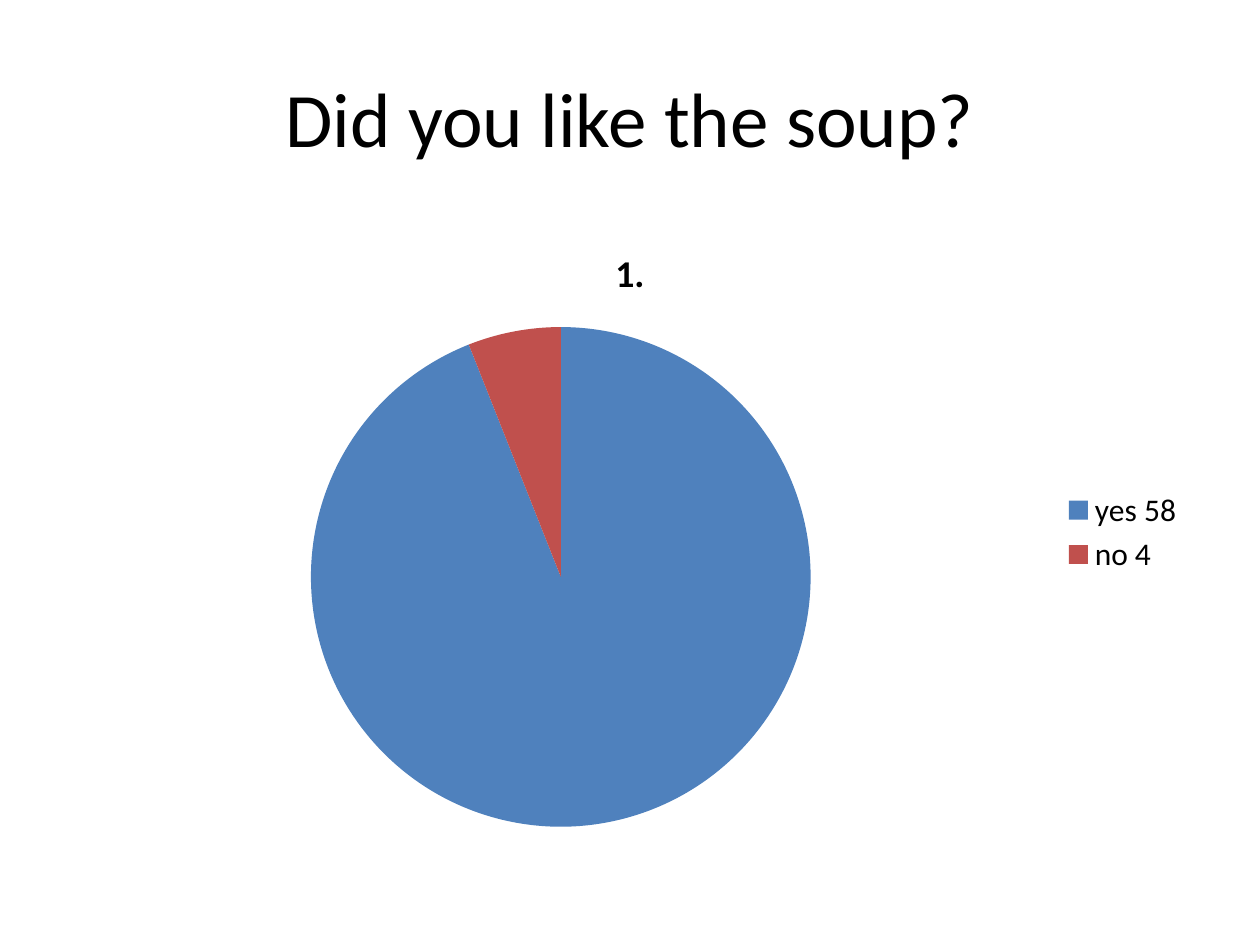
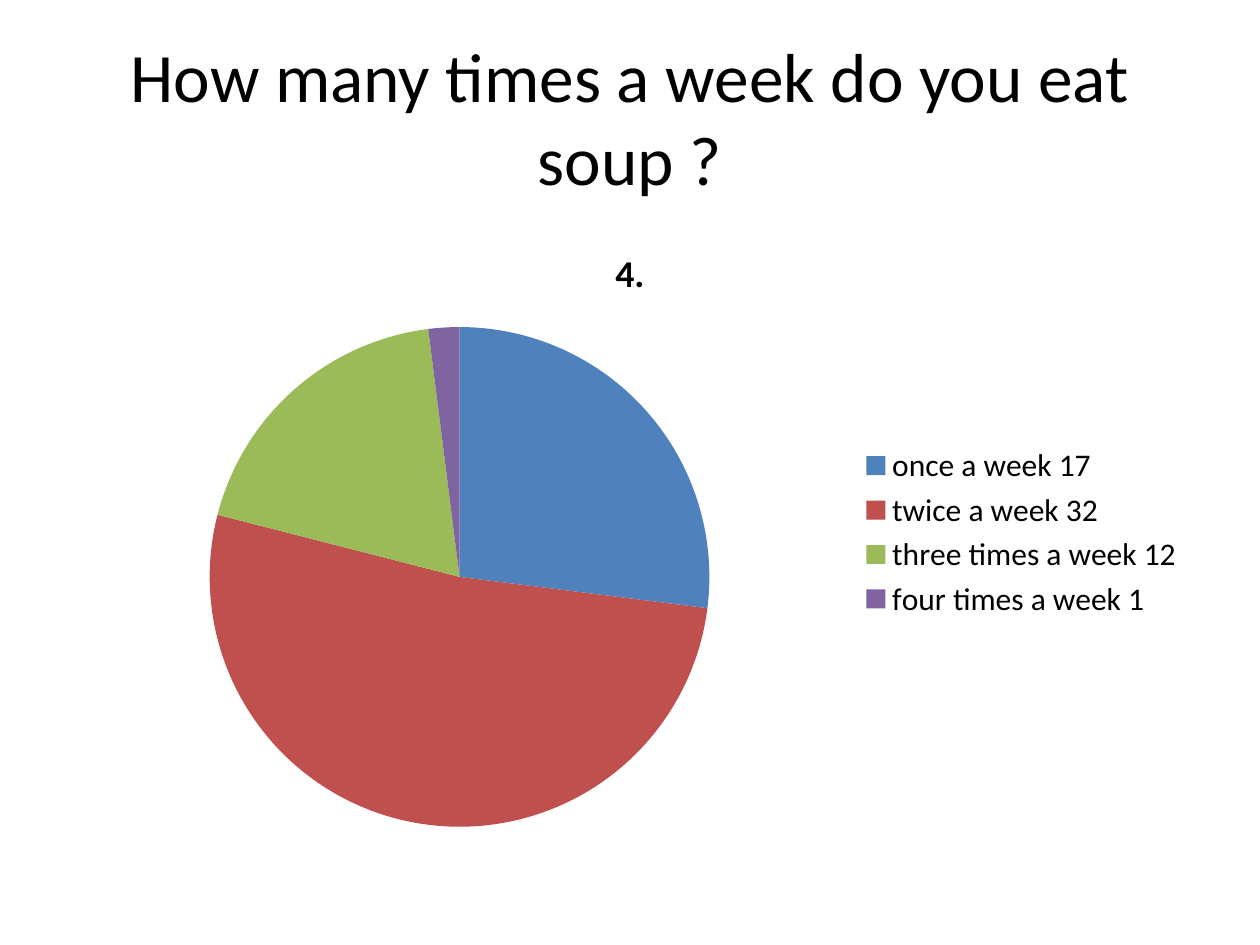
from dataclasses import dataclass

from pptx import Presentation
from pptx.chart.data import CategoryChartData
from pptx.dml.color import RGBColor
from pptx.enum.chart import XL_CHART_TYPE, XL_LEGEND_POSITION
from pptx.enum.text import MSO_ANCHOR, MSO_AUTO_SIZE, PP_ALIGN
from pptx.util import Pt

EMU_PER_PX = 9144  # 100 px to the inch
PAGE_SIZE = (1000, 750)
TITLE_AREA = (50, 30, 900, 125)
CHART_AREA = (50, 175, 900, 495)
TITLE_ONLY_LAYOUT = 5


@dataclass(frozen=True)
class Theme:
    font: str = "Calibri"
    ink: str = "000000"
    paper: str = "FFFFFF"
    slices: tuple = ("4F81BD", "C0504D", "9BBB59", "8064A2")
    title_size: float = 44
    long_title_size: float = 39.6
    chart_title_size: float = 21.6
    chart_size: float = 18


THEME = Theme()

QUESTIONS = [
    {
        "title": "Did you like the soup?",
        "title_size": THEME.title_size,
        "number": "1.",
        "answers": {"yes 58": 94, "no 4": 6},
    },
    {
        "title": "How many times a week do you eat soup ?",
        "title_size": THEME.long_title_size,
        "number": "4.",
        "answers": {
            "once a week 17": 27,
            "twice a week 32": 52,
            "three times a week 12": 19,
            "four times a week 1": 2,
        },
    },
]


def emu(*lengths):
    return [length * EMU_PER_PX for length in lengths]


def set_all(target, values):
    for name, value in values.items():
        setattr(target, name, value)


class SurveyDeck:
    def __init__(self, theme):
        self.theme = theme
        self.deck = Presentation()
        self.page = None
        width, height = emu(*PAGE_SIZE)
        set_all(self.deck, {"slide_width": width, "slide_height": height})

    def add_page(self):
        layout = self.deck.slide_layouts[TITLE_ONLY_LAYOUT]
        self.page = self.deck.slides.add_slide(layout)
        fill = self.page.background.fill
        fill.solid()
        fill.fore_color.rgb = RGBColor.from_string(self.theme.paper)

    def style_font(self, font, size, bold=False):
        set_all(font, {"name": self.theme.font, "size": Pt(size), "bold": bold})
        font.color.rgb = RGBColor.from_string(self.theme.ink)

    def add_title(self, text, size):
        title = self.page.shapes.title
        set_all(title, dict(zip(("left", "top", "width", "height"), emu(*TITLE_AREA))))
        frame = title.text_frame
        set_all(frame, {
            "text": text,
            "word_wrap": True,
            "auto_size": MSO_AUTO_SIZE.NONE,
            "vertical_anchor": MSO_ANCHOR.MIDDLE,
        })
        para = frame.paragraphs[0]
        para.alignment = PP_ALIGN.CENTER
        self.style_font(para.runs[0].font, size)

    def add_pie(self, name, answers):
        data = CategoryChartData()
        data.categories = list(answers)
        data.add_series(name, list(answers.values()))
        chart = self.page.shapes.add_chart(
            XL_CHART_TYPE.PIE, *emu(*CHART_AREA), data
        ).chart
        self.style_font(chart.font, self.theme.chart_size)

        chart.has_title = True
        heading = chart.chart_title
        heading.include_in_layout = False
        heading.text_frame.text = name
        span = heading.text_frame.paragraphs[0].runs[0]
        self.style_font(span.font, self.theme.chart_title_size, bold=True)

        chart.has_legend = True
        set_all(chart.legend, {
            "position": XL_LEGEND_POSITION.RIGHT,
            "include_in_layout": False,
        })

        plot = chart.plots[0]
        plot.vary_by_categories = True
        for index, color in enumerate(self.theme.slices[:len(answers)]):
            fill = plot.series[0].points[index].format.fill
            fill.solid()
            fill.fore_color.rgb = RGBColor.from_string(color)


def main():
    survey = SurveyDeck(THEME)
    for question in QUESTIONS:
        survey.add_page()
        survey.add_title(question["title"], question["title_size"])
        survey.add_pie(question["number"], question["answers"])
    survey.deck.save("out.pptx")


if __name__ == "__main__":
    main()
